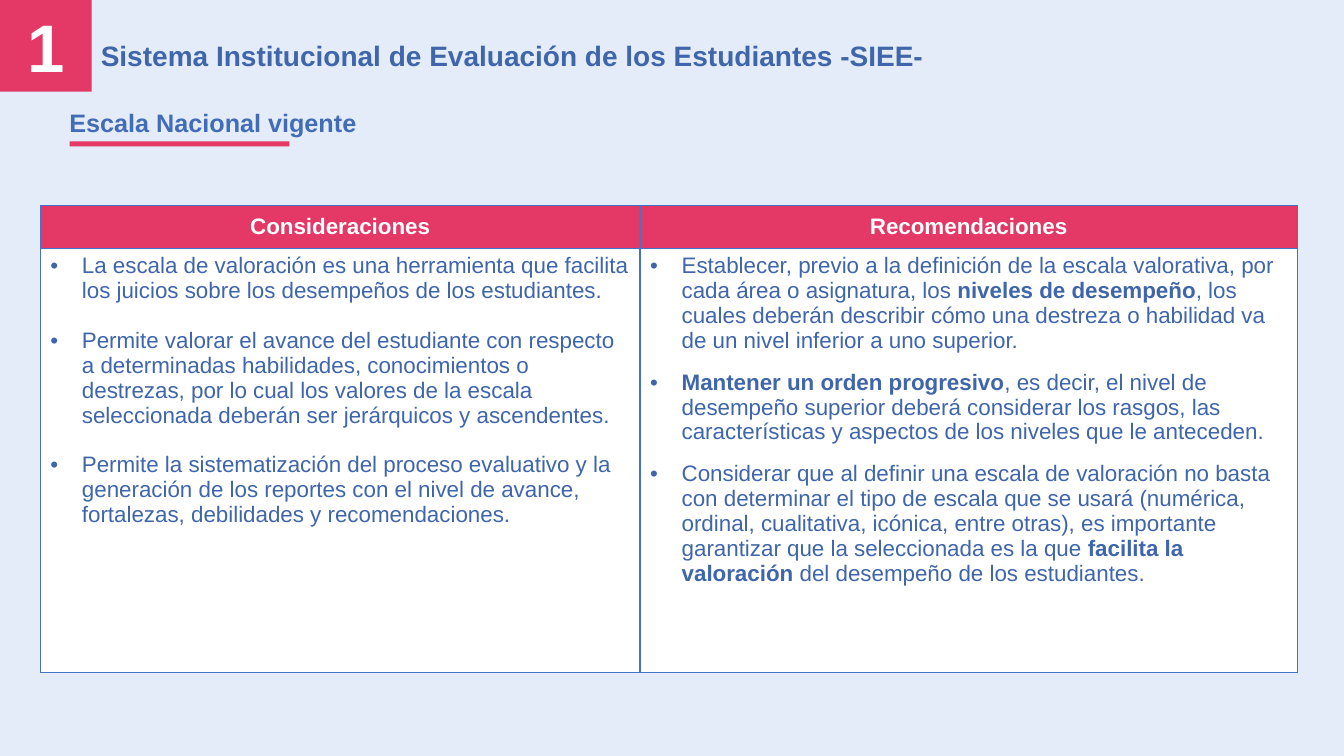
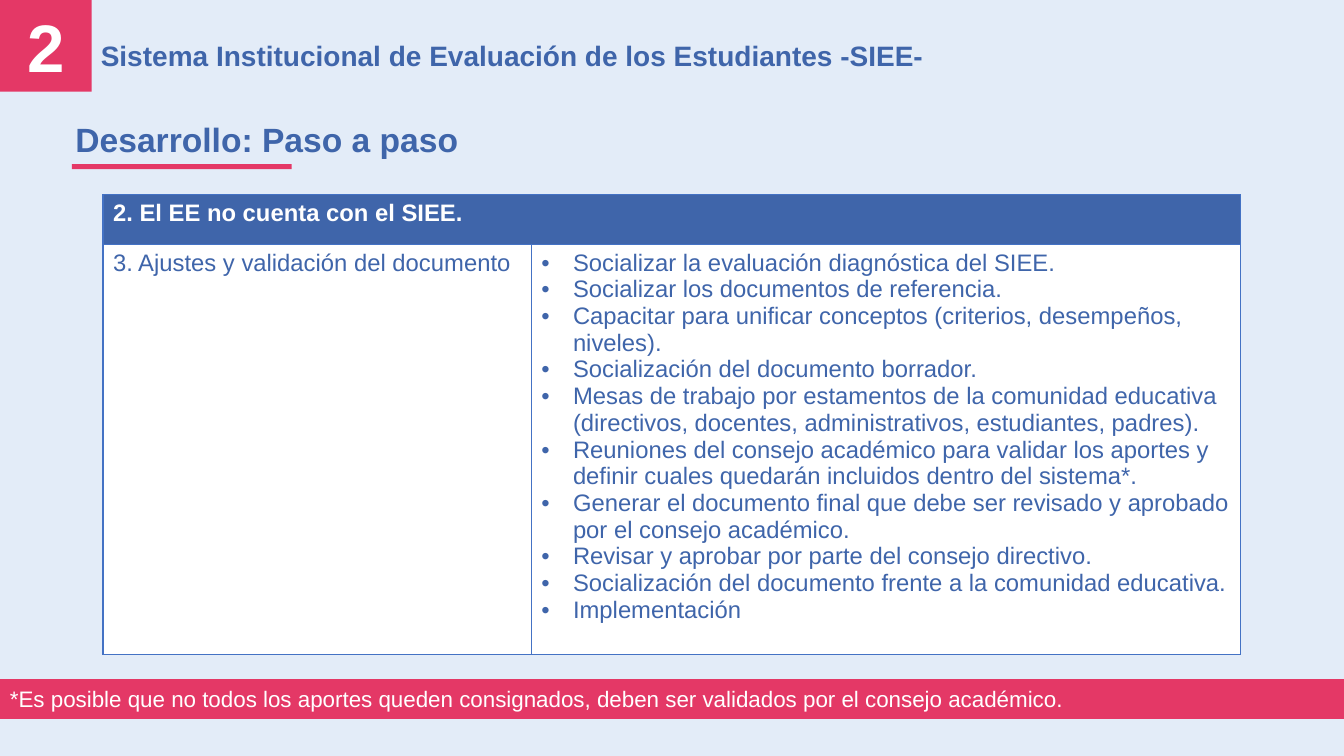
from pptx import Presentation
from pptx.dml.color import RGBColor
from pptx.enum.shapes import MSO_SHAPE as Shape
from pptx.enum.text import MSO_ANCHOR as Anchor, MSO_AUTO_SIZE as Fit, PP_ALIGN as Align
from pptx.oxml.ns import qn
from pptx.util import Pt
from lxml.etree import SubElement as sub

FONT = "Arial"
PALE, WHITE = "E3ECF8", "FFFFFF"
PINK, BLUE, SKY, EDGE = "E43866", "3F65AA", "436CB7", "4472C4"
TITLE = "Sistema Institucional de Evaluación de los Estudiantes -SIEE-"
INDENT = 22.5


def paint(fill, color):
    fill.solid()
    fill.fore_color.rgb = RGBColor.from_string(color)


def style(para, size, color, bold=False, align=Align.LEFT):
    para.alignment = align
    for run in para.runs:
        font = run.font
        font.name, font.size, font.bold = FONT, Pt(size), bold
        font.color.rgb = RGBColor.from_string(color)


def bullet(para):
    props = para._p.get_or_add_pPr()
    props.set("marL", str(Pt(INDENT)))
    props.set("indent", str(-Pt(INDENT)))
    sub(props, qn("a:buFont"), typeface=FONT)
    sub(props, qn("a:buChar"), char="•")


def border(cell):
    props = cell._tc.get_or_add_tcPr()
    for side in ("lnL", "lnR", "lnT", "lnB"):
        line = sub(props, qn("a:" + side), w=str(Pt(1)))
        sub(sub(line, qn("a:solidFill")), qn("a:srgbClr"), val=EDGE)


class Deck:
    def __init__(self):
        self.prs = Presentation()
        self.prs.slide_width, self.prs.slide_height = Pt(960), Pt(540)
        paint(self.prs.slide_master.background.fill, PALE)

    def page(self, number):
        self.slide = self.prs.slides.add_slide(self.prs.slide_layouts[5])
        title = self.slide.shapes.title
        title.left, title.top = Pt(64.8), Pt(23.8)
        title.width, title.height = Pt(885.6), Pt(31.7)
        frame = title.text_frame
        frame.text = TITLE
        frame.auto_size, frame.vertical_anchor = Fit.NONE, Anchor.TOP
        style(frame.paragraphs[0], 20, BLUE, True)
        frame = self.block(0, 0, 65.5, 65.5).text_frame
        frame.text = str(number)
        frame.vertical_anchor = Anchor.MIDDLE
        style(frame.paragraphs[0], 48, WHITE, True, Align.CENTER)

    def block(self, left, top, width, height):
        shape = self.slide.shapes.add_shape(
            Shape.RECTANGLE, Pt(left), Pt(top), Pt(width), Pt(height))
        shape.shadow.inherit = False
        paint(shape.fill, PINK)
        shape.line.fill.background()
        return shape

    def heading(self, text, left, top, size, color, rule):
        """Add a subtitle; rule is the left and top of its underline."""
        box = self.slide.shapes.add_textbox(Pt(left), Pt(top), Pt(376), Pt(size * 1.5))
        frame = box.text_frame
        frame.word_wrap = True
        frame.text = text
        style(frame.paragraphs[0], size, color, True)
        self.block(*rule, 157, 3.6)

    def note(self, text):
        bar = self.block(0, 486, 960, 26.8)
        paint(bar.line.fill, PINK)
        bar.line.width = Pt(1.5)
        frame = bar.text_frame
        frame.vertical_anchor = Anchor.TOP
        frame.text = text
        style(frame.paragraphs[0], 16, WHITE, align=Align.JUSTIFY)

    def grid(self, left, top, cols, rows):
        frame = self.slide.shapes.add_table(
            len(rows), len(cols), Pt(left), Pt(top), Pt(sum(cols)), Pt(sum(rows)))
        table = frame.table
        for col, width in zip(table.columns, cols):
            col.width = Pt(width)
        for row, height in zip(table.rows, rows):
            row.height = Pt(height)
        for cell in table.iter_cells():
            border(cell)
            paint(cell.fill, WHITE)
        return table

    def head(self, cell, text, size, fill, align=Align.LEFT):
        paint(cell.fill, fill)
        cell.text = text
        style(cell.text_frame.paragraphs[0], size, WHITE, True, align)

    def items(self, cell, texts, size, gap=0):
        """Fill a cell with bullets; words between bars are bold."""
        frame = cell.text_frame
        for i, text in enumerate(texts):
            para = frame.add_paragraph() if i else frame.paragraphs[0]
            para.space_before = Pt(gap if i else 0)
            for part in text.split("|"):
                para.add_run().text = part
            style(para, size, BLUE)
            for run in para.runs[1::2]:
                run.font.bold = True
            bullet(para)


def scale(deck):
    deck.page(1)
    deck.heading("Escala Nacional vigente", 42.5, 73.4, 18, SKY, (49.7, 101))
    table = deck.grid(28.8, 147, (428.4, 469.4), (30.6, 303))
    for i, text in enumerate(("Consideraciones", "Recomendaciones")):
        cell = table.cell(0, i)
        deck.head(cell, text, 16, PINK, Align.CENTER)
        cell.vertical_anchor = Anchor.MIDDLE
    deck.items(table.cell(1, 0), (
        "La escala de valoración es una herramienta que facilita los juicios "
        "sobre los desempeños de los estudiantes.",
        "Permite valorar el avance del estudiante con respecto a determinadas "
        "habilidades, conocimientos o destrezas, por lo cual los valores de la "
        "escala seleccionada deberán ser jerárquicos y ascendentes.",
        "Permite la sistematización del proceso evaluativo y la generación de los "
        "reportes con el nivel de avance, fortalezas, debilidades y recomendaciones.",
    ), 16, 17.8)
    deck.items(table.cell(1, 1), (
        "Establecer, previo a la definición de la escala valorativa, por cada área "
        "o asignatura, los |niveles de desempeño|, los cuales deberán describir "
        "cómo una destreza o habilidad va de un nivel inferior a uno superior.",
        "|Mantener un orden progresivo|, es decir, el nivel de desempeño superior "
        "deberá considerar los rasgos, las características y aspectos de los "
        "niveles que le anteceden.",
        "Considerar que al definir una escala de valoración no basta con determinar "
        "el tipo de escala que se usará (numérica, ordinal, cualitativa, icónica, "
        "entre otras), es importante garantizar que la seleccionada es la que "
        "|facilita la valoración |del desempeño de los estudiantes.",
    ), 16, 12)


def steps(deck):
    deck.page(2)
    deck.heading("Desarrollo: Paso a paso", 46.8, 81.4, 24, BLUE, (51.4, 117.2))
    table = deck.grid(73.6, 139, (306, 506.6), (35.6, 293))
    table.cell(0, 0).merge(table.cell(0, 1))
    deck.head(table.cell(0, 0), "2. El EE no cuenta con el SIEE.", 17, BLUE)
    cell = table.cell(1, 0)
    cell.text = "3. Ajustes y validación del documento"
    style(cell.text_frame.paragraphs[0], 17, BLUE)
    deck.items(table.cell(1, 1), (
        "Socializar la evaluación diagnóstica del SIEE.",
        "Socializar los documentos de referencia.",
        "Capacitar para unificar conceptos (criterios, desempeños, niveles).",
        "Socialización del documento borrador.",
        "Mesas de trabajo por estamentos de la comunidad educativa (directivos, "
        "docentes, administrativos, estudiantes, padres).",
        "Reuniones del consejo académico para validar los aportes y definir cuales "
        "quedarán incluidos dentro del sistema*.",
        "Generar el documento final que debe ser revisado y aprobado por el consejo "
        "académico.",
        "Revisar y aprobar por parte del consejo directivo.",
        "Socialización del documento frente a la comunidad educativa.",
        "Implementación",
    ), 17)
    deck.note("*Es posible que no todos los aportes queden consignados, deben ser "
              "validados por el consejo académico.")


def main():
    deck = Deck()
    scale(deck)
    steps(deck)
    deck.prs.save("out.pptx")


if __name__ == "__main__":
    main()
